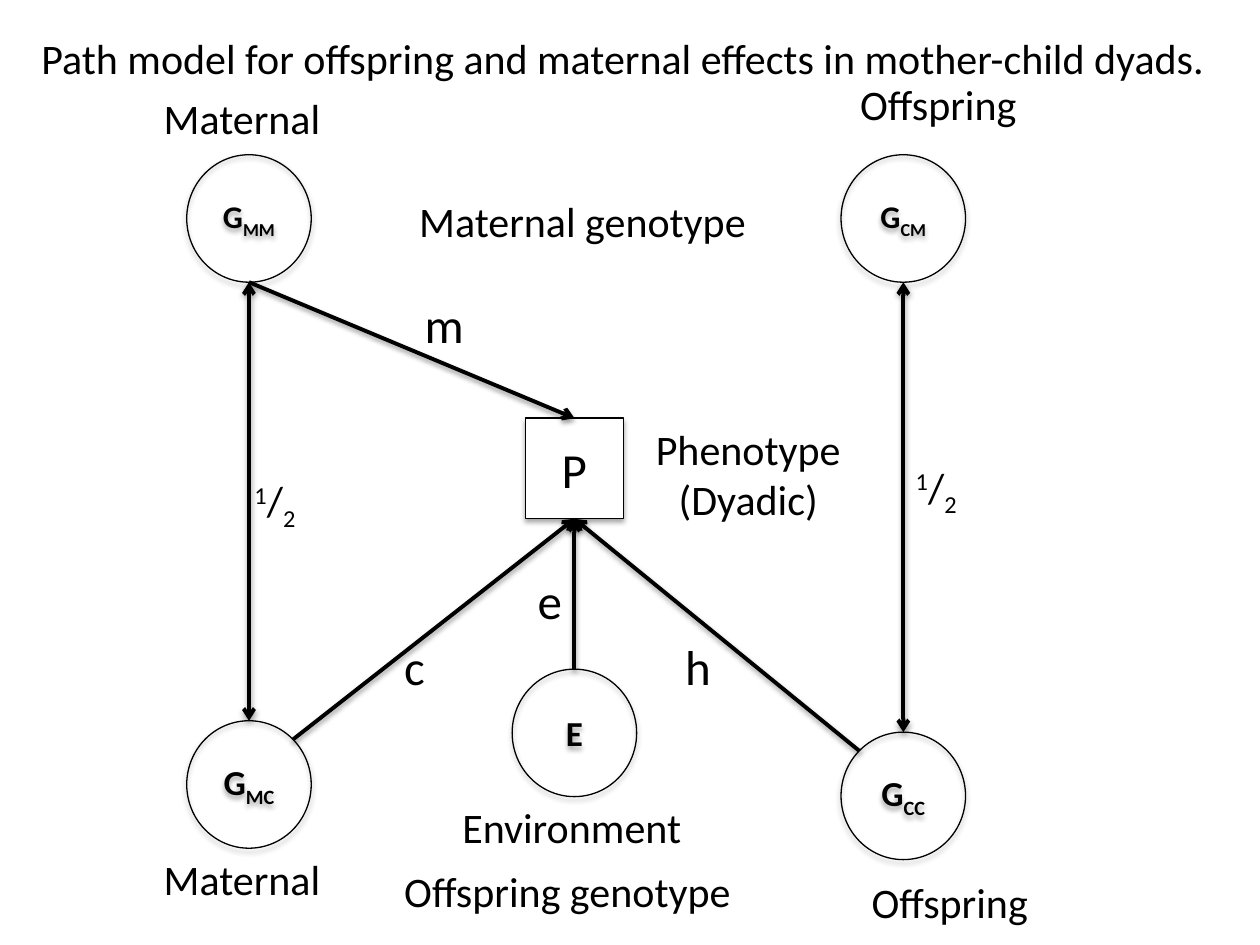
from math import sqrt

from lxml.etree import SubElement
from pptx import Presentation
from pptx.dml.color import RGBColor
from pptx.enum.shapes import MSO_CONNECTOR as Connector, MSO_SHAPE as Preset
from pptx.enum.text import MSO_ANCHOR as Anchor, MSO_AUTO_SIZE as AutoSize, PP_ALIGN as Align
from pptx.oxml.ns import qn
from pptx.util import Cm, Pt

BLACK = RGBColor(0x00, 0x00, 0x00)
WHITE = RGBColor(0xFF, 0xFF, 0xFF)
FONT = "Calibri"

SUPER, SUB = 30, -25
HALF = [("1", SUPER), ("/", 0), ("2", SUB)]

# Lengths are in centimetres.
NODE_W, NODE_H = 2.51, 2.57
MOTHER_X, MIDDLE_X, CHILD_X = 5.02, 11.58, 18.21
TOP_Y, MC_Y, CC_Y, E_Y = 3.12, 14.53, 14.76, 13.49
P_Y, P_W, P_H = 8.43, 1.98, 2.03
LABEL_H, PATH_H = 1.27, 1.45


def add_runs(paragraph, runs, size, bold=False):
    """Add (text, baseline shift in percent) pairs as runs."""
    for text, shift in runs:
        run = paragraph.add_run()
        run.text = text
        font = run.font
        font.name, font.size, font.bold = FONT, Pt(size), bold
        font.color.rgb = BLACK
        if shift:
            run._r.get_or_add_rPr().set("baseline", str(shift * 1000))


def add_shadow(shape, distance, opacity):
    """Give a soft black shadow straight below; distance is in points."""
    effects = SubElement(shape._element.spPr, qn("a:effectLst"))
    outer = SubElement(effects, qn("a:outerShdw"), blurRad=str(Pt(3.1)),
                       dist=str(Pt(distance)), dir="5400000", rotWithShape="0")
    color = SubElement(outer, qn("a:srgbClr"), val=str(BLACK))
    SubElement(color, qn("a:alpha"), val=str(opacity * 1000))


def add_node(slide, preset, center_x, top, width, height, runs, size, bold=True):
    node = slide.shapes.add_shape(preset, Cm(center_x - width / 2), Cm(top),
                                  Cm(width), Cm(height))
    if preset == Preset.RECTANGLE:
        node.fill.solid()
        node.fill.fore_color.rgb = WHITE
    else:
        node.fill.background()
    node.line.color.rgb = BLACK
    node.line.width = Pt(0.75)
    add_shadow(node, 1.8, 35)
    frame = node.text_frame
    frame.vertical_anchor = Anchor.MIDDLE
    paragraph = frame.paragraphs[0]
    paragraph.alignment = Align.CENTER
    add_runs(paragraph, runs, size, bold)


def add_arrow(slide, start, end, two_way=False):
    arrow = slide.shapes.add_connector(Connector.STRAIGHT, Cm(start[0]), Cm(start[1]),
                                       Cm(end[0]), Cm(end[1]))
    arrow.line.color.rgb = BLACK
    arrow.line.width = Pt(2.25)
    stroke = arrow.line._get_or_add_ln()
    if two_way:
        SubElement(stroke, qn("a:headEnd"), type="arrow")
    SubElement(stroke, qn("a:tailEnd"), type="arrow")
    add_shadow(arrow, 1.6, 38)


def add_label(slide, left, top, width, height, lines, size=24, wrap=False, align=Align.LEFT):
    """Add a text box with one paragraph for each list of runs in lines."""
    box = slide.shapes.add_textbox(Cm(left), Cm(top), Cm(width), Cm(height))
    frame = box.text_frame
    frame.word_wrap = wrap
    frame.auto_size = AutoSize.SHAPE_TO_FIT_TEXT
    for index, runs in enumerate(lines):
        paragraph = frame.add_paragraph() if index else frame.paragraphs[0]
        paragraph.alignment = align
        add_runs(paragraph, runs, size)


def set_title(slide, text):
    title = slide.shapes.title
    title.left, title.top, title.width, title.height = Cm(0.58), Cm(0.53), Cm(24.82), Cm(1.27)
    frame = title.text_frame
    frame.auto_size = AutoSize.NONE
    frame.vertical_anchor = Anchor.TOP
    paragraph = frame.paragraphs[0]
    paragraph.alignment = Align.LEFT
    add_runs(paragraph, [(text, 0)], 24)


def add_nodes(slide):
    for center_x, top, letter, index, size in [
        (MOTHER_X, TOP_Y, "G", "MM", 18),
        (CHILD_X, TOP_Y, "G", "CM", 18),
        (MOTHER_X, MC_Y, "G", "MC", 20),
        (CHILD_X, CC_Y, "G", "CC", 20),
        (MIDDLE_X, E_Y, "E", "", 20),
    ]:
        runs = [(letter, 0)] + ([(index, SUB)] if index else [])
        add_node(slide, Preset.OVAL, center_x, top, NODE_W, NODE_H, runs, size)
    add_node(slide, Preset.RECTANGLE, MIDDLE_X, P_Y, P_W, P_H, [("P", 0)], 28, bold=False)


def add_paths(slide):
    gene_bottom = TOP_Y + NODE_H
    phenotype_top, phenotype_bottom = (MIDDLE_X, P_Y), (MIDDLE_X, P_Y + P_H)
    diagonal_x = NODE_W / 2 / sqrt(2)
    diagonal_y = NODE_H / 2 * (1 - 1 / sqrt(2))

    for center_x, lower_y in [(MOTHER_X, MC_Y), (CHILD_X, CC_Y)]:
        add_arrow(slide, (center_x, gene_bottom), (center_x, lower_y), two_way=True)
    add_arrow(slide, (MOTHER_X, gene_bottom), phenotype_top)
    for start in [
        (MOTHER_X + diagonal_x, MC_Y + diagonal_y),
        (CHILD_X - diagonal_x, CC_Y + diagonal_y),
        (MIDDLE_X, E_Y),
    ]:
        add_arrow(slide, start, phenotype_bottom)


def add_labels(slide):
    for left, top in [(4.88, 9.45), (18.21, 9.17)]:
        add_label(slide, left, top, 1.55, LABEL_H, [HALF], wrap=True)
    for text, left, top, width in [
        ("m", 8.31, 5.82, 0.91),
        ("c", 7.9, 12.7, 1.83),
        ("h", 13.56, 12.7, 2.44),
        ("e", 10.59, 11.38, 1.83),
    ]:
        add_label(slide, left, top, width, PATH_H, [[(text, 0)]], size=28, wrap=True)
    for text, left, top, width in [
        ("Maternal", 3.05, 1.75, 3.71),
        ("Offspring", 17.09, 1.45, 3.71),
        ("Maternal genotype", 8.2, 3.81, 7.19),
        ("Environment", 9.07, 16.03, 5.0),
        ("Maternal", 3.05, 17.09, 3.71),
        ("Offspring genotype", 7.9, 17.32, 7.19),
        ("Offspring", 17.32, 17.55, 3.71),
    ]:
        add_label(slide, left, top, width, LABEL_H, [[(text, 0)]])
    add_label(slide, 12.95, 8.41, 4.27, 2.31,
              [[("Phenotype", 0)], [("(Dyadic)", 0)]], align=Align.CENTER)


def main():
    presentation = Presentation()
    presentation.slide_width, presentation.slide_height = Cm(25.4), Cm(19.05)
    slide = presentation.slides.add_slide(presentation.slide_layouts.get_by_name("Title Only"))
    set_title(slide, "Path model for offspring and maternal effects in mother-child dyads.")
    add_nodes(slide)
    add_paths(slide)
    add_labels(slide)
    presentation.save("out.pptx")


if __name__ == "__main__":
    main()
